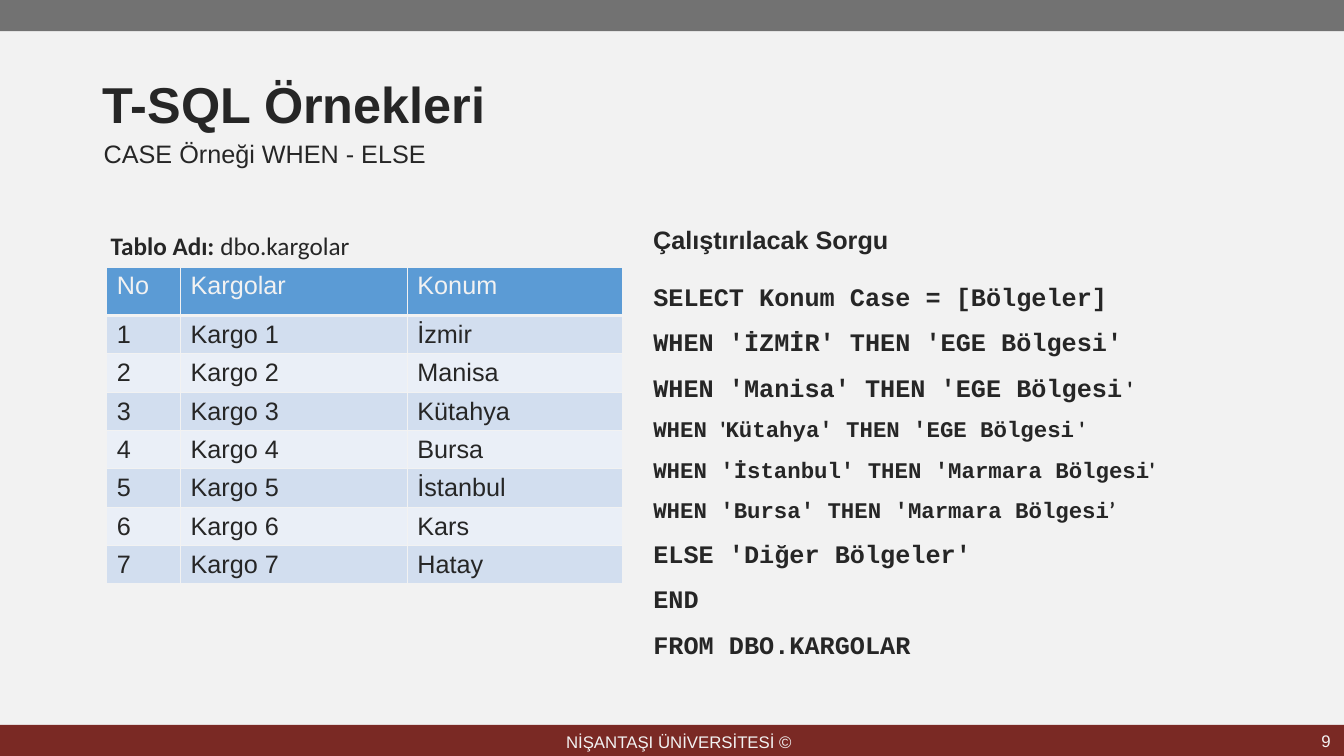
from lxml import etree
from pptx import Presentation
from pptx.dml.color import RGBColor
from pptx.enum.shapes import MSO_SHAPE
from pptx.enum.text import MSO_ANCHOR, MSO_AUTO_SIZE, PP_ALIGN
from pptx.oxml.ns import qn
from pptx.util import Emu, Inches, Pt

RECTANGLE = MSO_SHAPE.RECTANGLE
TOP, MIDDLE = MSO_ANCHOR.TOP, MSO_ANCHOR.MIDDLE
LEFT, CENTER = PP_ALIGN.LEFT, PP_ALIGN.CENTER
RIGHT, JUSTIFY = PP_ALIGN.RIGHT, PP_ALIGN.JUSTIFY
FIXED = MSO_AUTO_SIZE.NONE

INK, PAPER = "262626", "F2F2F2"
GRAY, MAROON = "727272", "7A2924"
HEADER_BLUE, BANDS = "5B9BD5", ("D2DEEF", "EAEFF7")

BODY = {"name": "Arial", "size": Pt(18), "bold": False}
STRONG = {**BODY, "bold": True}
HEADLINE = {**STRONG, "size": Pt(36)}
FOOTER = {**BODY, "size": Pt(12)}
LABEL = {**BODY, "name": "Calibri"}
LABEL_STRONG = {**LABEL, "bold": True}
CODE = {**STRONG, "name": "Courier New"}
CODE_SMALL = {**CODE, "size": Pt(16)}
QUOTE = {**CODE_SMALL, "name": "Calibri"}

CARGO_LOCATIONS = ("İzmir", "Manisa", "Kütahya", "Bursa", "İstanbul", "Kars", "Hatay")
CARGO_ROWS = [("No", "Kargolar", "Konum")] + [
    (str(number), f"Kargo {number}", location)
    for number, location in enumerate(CARGO_LOCATIONS, 1)
]
QUERY = [
    [("SELECT Konum Case = [Bölgeler]", CODE)],
    [("WHEN 'İZMİR' THEN 'EGE Bölgesi'", CODE)],
    [("WHEN 'Manisa' THEN 'EGE Bölgesi", CODE), (" '", QUOTE)],
    [("WHEN ", CODE_SMALL), ("'", QUOTE),
     ("Kütahya' THEN 'EGE Bölgesi", CODE_SMALL), (" '", QUOTE)],
    [("WHEN 'İstanbul' THEN 'Marmara Bölgesi", CODE_SMALL), ("'", QUOTE)],
    [("WHEN 'Bursa' THEN 'Marmara Bölgesi", CODE_SMALL), ("’", QUOTE)],
    [("ELSE 'Diğer Bölgeler'", CODE)],
    [("END", CODE)],
    [("FROM DBO.KARGOLAR", CODE)],
]


def color(hex_string):
    return RGBColor.from_string(hex_string)


class LessonSlide:
    """Draws styled elements on one slide with a grid of 100 columns and 100 rows."""

    def __init__(self, deck):
        self.column = deck.slide_width / 100
        self.row = deck.slide_height / 100
        self.slide = deck.slides.add_slide(deck.slide_layouts[1])
        background = self.slide.background.fill
        background.solid()
        background.fore_color.rgb = color(PAPER)

    def place(self, left, top, width, height):
        return (Emu(round(left * self.column)), Emu(round(top * self.row)),
                Emu(round(width * self.column)), Emu(round(height * self.row)))

    def set_lines(self, frame, lines, ink=INK, align=LEFT, spacing=1.0, anchor=TOP):
        frame_format = {"word_wrap": True, "auto_size": FIXED, "vertical_anchor": anchor}
        for name, value in frame_format.items():
            setattr(frame, name, value)
        paragraph_format = {"alignment": align, "line_spacing": spacing,
                            "space_before": Pt(0), "space_after": Pt(0)}
        for index, line in enumerate(lines):
            paragraph = frame.add_paragraph() if index else frame.paragraphs[0]
            for name, value in paragraph_format.items():
                setattr(paragraph, name, value)
            for words, style in line:
                run = paragraph.add_run()
                run.text = words
                for name, value in style.items():
                    setattr(run.font, name, value)
                run.font.color.rgb = color(ink)

    def bar(self, area, fill):
        band = self.slide.shapes.add_shape(RECTANGLE, *self.place(*area))
        band.shadow.inherit = False
        band.fill.solid()
        band.fill.fore_color.rgb = color(fill)
        band.line.fill.background()

    def text(self, area, lines, **layout):
        box = self.slide.shapes.add_textbox(*self.place(*area))
        self.set_lines(box.text_frame, lines, **layout)

    def placeholder(self, index, area, lines, **layout):
        holder = self.slide.placeholders[index]
        holder.left, holder.top, holder.width, holder.height = self.place(*area)
        self.set_lines(holder.text_frame, lines, **layout)
        return holder

    def title(self, area, words):
        self.placeholder(0, area, [[(words, HEADLINE)]], spacing=0.9, anchor=MIDDLE)

    def query(self, area, lines):
        holder = self.placeholder(1, area, lines, align=JUSTIFY, spacing=1.5)
        for paragraph in holder.text_frame.paragraphs:
            properties = paragraph._p.get_or_add_pPr()
            properties.set("marL", "0")
            properties.set("indent", "0")
            etree.SubElement(properties, qn("a:buNone"))

    def borders(self, cell, bottom):
        properties = cell._tc.get_or_add_tcPr()
        for side, points in (("L", 1), ("R", 1), ("T", 1), ("B", bottom)):
            edge = etree.SubElement(properties, qn(f"a:ln{side}"), w=str(int(Pt(points))))
            fill = etree.SubElement(edge, qn("a:solidFill"))
            etree.SubElement(fill, qn("a:srgbClr"), val=PAPER)

    def table(self, left, top, widths, header_height, row_height, rows):
        heights = [header_height] + [row_height] * (len(rows) - 1)
        area = self.place(left, top, sum(widths), sum(heights))
        grid = self.slide.shapes.add_table(len(rows), len(widths), *area).table
        for column, width in zip(grid.columns, widths):
            column.width = Emu(round(width * self.column))
        for row_index, values in enumerate(rows):
            grid.rows[row_index].height = Emu(round(heights[row_index] * self.row))
            is_header = row_index == 0
            fill = HEADER_BLUE if is_header else BANDS[(row_index - 1) % 2]
            for column_index, value in enumerate(values):
                cell = grid.cell(row_index, column_index)
                self.borders(cell, 3 if is_header else 1)
                cell.fill.solid()
                cell.fill.fore_color.rgb = color(fill)
                self.set_lines(cell.text_frame, [[(value, BODY)]], PAPER if is_header else INK)


def main():
    deck = Presentation()
    deck.slide_width, deck.slide_height = Inches(13.33), Inches(7.5)
    lesson = LessonSlide(deck)
    lesson.bar((0, 0, 100, 4.13), GRAY)
    lesson.bar((0, 95.87, 100, 4.13), MAROON)
    lesson.text((41.33, 95.73, 18.38, 4.67), [[("NİŞANTAŞI ÜNİVERSİTESİ ©", FOOTER)]],
                ink=PAPER, align=CENTER, anchor=MIDDLE)
    lesson.text((76.65, 95.47, 23.1, 5.07), [[("9", FOOTER)]],
                ink=PAPER, align=RIGHT, anchor=MIDDLE)
    lesson.title((6.9, 10.13, 87.25, 8), "T-SQL Örnekleri")
    lesson.text((6.98, 17.6, 69.7, 5.33), [[("CASE Örneği WHEN - ELSE", BODY)]], align=JUSTIFY)
    lesson.text((7.5, 27.87, 24, 6.8),
                [[("Tablo Adı: ", LABEL_STRONG), ("dbo.kargolar", LABEL)]],
                align=JUSTIFY, spacing=1.5)
    lesson.table(7.95, 35.33, (5.48, 16.88, 15.98), 6.4, 5.07, CARGO_ROWS)
    lesson.text((47.86, 29.07, 24, 5.33), [[("Çalıştırılacak Sorgu", STRONG)]])
    lesson.query((47.86, 34.53, 46.29, 53.2), QUERY)
    deck.save("out.pptx")


if __name__ == "__main__":
    main()
